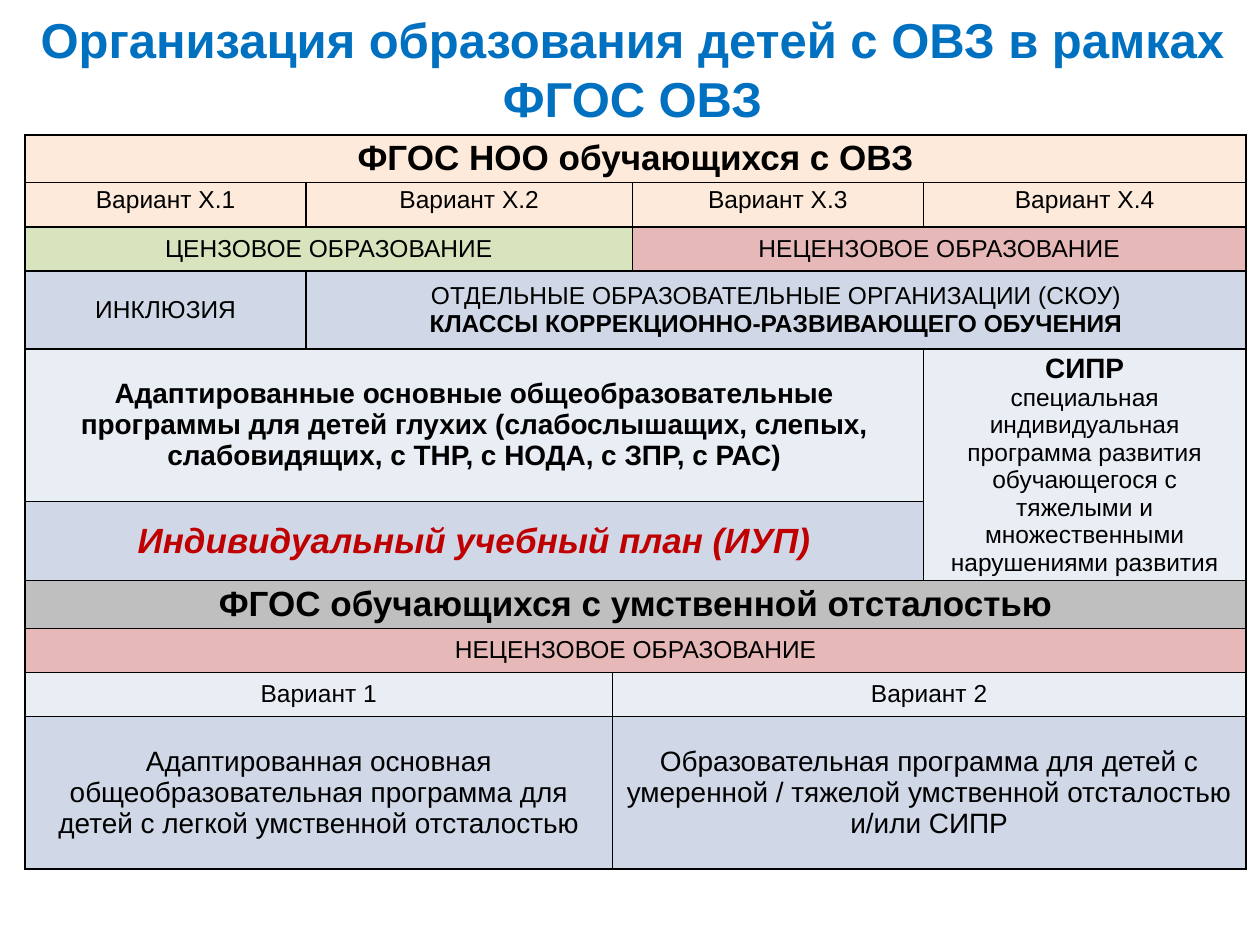
from dataclasses import dataclass
from itertools import product

from lxml.etree import SubElement
from pptx import Presentation
from pptx.dml.color import RGBColor
from pptx.enum.text import MSO_ANCHOR as Anchor, MSO_AUTO_SIZE as AutoSize, PP_ALIGN as Align
from pptx.oxml.ns import qn
from pptx.util import Inches, Pt


@dataclass(frozen=True)
class Theme:
    """Colours, type sizes and text styles of the slide."""
    font: str = "Arial"
    black: str = "000000"
    title: str = "0070C0"
    accent: str = "C00000"
    peach: str = "FDEADA"
    green: str = "D7E4BD"
    rose: str = "E6B9B8"
    blue: str = "D0D8E8"
    pale: str = "E9EDF4"
    grey: str = "BFBFBF"
    title_size: int = 28
    heading_size: int = 20
    program_size: int = 16
    text_size: int = 14
    border: float = 1

    def style(self, name):
        """Return size, bold, italic and colour for a named style."""
        return {
            "title": (self.title_size, True, False, self.title),
            "heading": (self.heading_size, True, False, self.black),
            "plan": (self.heading_size, True, True, self.accent),
            "program": (self.program_size, False, False, self.black),
            "program bold": (self.program_size, True, False, self.black),
            "text": (self.text_size, False, False, self.black),
            "text bold": (self.text_size, True, False, self.black),
        }[name]


THEME = Theme()
SLIDE_SIZE = (10, 7.5)
TITLE_BOX = (0.04, 0.02, 9.96, 1.05)
TABLE_ORIGIN = (0.2, 1.07)
COLUMNS = (2.23, 2.43, 0.1, 2.31, 2.56)
LABEL, HEADING, FORMS, PLAN, PROGRAM = 0.35, 0.38, 0.62, 0.53, 1.21
ROWS = (HEADING, LABEL, LABEL, FORMS, PROGRAM, PLAN, HEADING, LABEL, LABEL, PROGRAM)
TOP_ROWS = 2

# row, column, row span, column span, fill, paragraphs
CELLS = [
    (0, 0, 1, 5, THEME.peach, [("ФГОС НОО обучающихся с ОВЗ", "heading")]),
    (1, 0, 1, 1, THEME.peach, [("Вариант Х.1", "text")]),
    (1, 1, 1, 2, THEME.peach, [("Вариант Х.2", "text")]),
    (1, 3, 1, 1, THEME.peach, [("Вариант Х.3", "text")]),
    (1, 4, 1, 1, THEME.peach, [("Вариант Х.4", "text")]),
    (2, 0, 1, 3, THEME.green, [("ЦЕНЗОВОЕ ОБРАЗОВАНИЕ", "text")]),
    (2, 3, 1, 2, THEME.rose, [("НЕЦЕНЗОВОЕ ОБРАЗОВАНИЕ", "text")]),
    (3, 0, 1, 1, THEME.blue, [("ИНКЛЮЗИЯ", "text")]),
    (3, 1, 1, 4, THEME.blue, [
        ("ОТДЕЛЬНЫЕ ОБРАЗОВАТЕЛЬНЫЕ ОРГАНИЗАЦИИ (СКОУ)", "text"),
        ("КЛАССЫ КОРРЕКЦИОННО-РАЗВИВАЮЩЕГО ОБУЧЕНИЯ", "text bold")]),
    (4, 0, 1, 4, THEME.pale, [
        ("Адаптированные основные общеобразовательные программы для детей глухих "
         "(слабослышащих, слепых, слабовидящих, с ТНР, с НОДА, с ЗПР, с РАС)", "program bold")]),
    (4, 4, 2, 1, THEME.pale, [
        ("СИПР", "program bold"),
        ("специальная индивидуальная программа развития обучающегося с тяжелыми "
         "и множественными нарушениями развития", "text")]),
    (5, 0, 1, 4, THEME.blue, [("Индивидуальный учебный план (ИУП)", "plan")]),
    (6, 0, 1, 5, THEME.grey, [("ФГОС обучающихся с умственной отсталостью", "heading")]),
    (7, 0, 1, 5, THEME.rose, [("НЕЦЕНЗОВОЕ ОБРАЗОВАНИЕ", "text")]),
    (8, 0, 1, 2, THEME.pale, [("Вариант 1", "text")]),
    (8, 2, 1, 3, THEME.pale, [("Вариант 2", "text")]),
    (9, 0, 1, 2, THEME.blue, [
        ("Адаптированная основная общеобразовательная программа для детей "
         "с легкой умственной отсталостью", "program")]),
    (9, 2, 1, 3, THEME.blue, [
        ("Образовательная программа для детей с умеренной / тяжелой умственной отсталостью",
         "program"),
        ("и/или СИПР", "program")]),
]


def set_attributes(target, values):
    """Set each named value on the target."""
    for name, value in values.items():
        setattr(target, name, value)


def write_paragraphs(frame, paragraphs):
    """Fill a text frame with centred, styled paragraphs."""
    for index, (wording, style_name) in enumerate(paragraphs):
        line = frame.add_paragraph() if index else frame.paragraphs[0]
        line.alignment = Align.CENTER
        run = line.add_run()
        run.text = wording
        size, bold, italic, colour = THEME.style(style_name)
        set_attributes(run.font, {"name": THEME.font, "size": Pt(size), "bold": bold,
                                  "italic": italic})
        run.font.color.rgb = RGBColor.from_string(colour)


def add_title(slide, wording):
    """Place and format the title placeholder."""
    heading = slide.shapes.title
    left, top, width, height = map(Inches, TITLE_BOX)
    set_attributes(heading, {"left": left, "top": top, "width": width, "height": height})
    set_attributes(heading.text_frame, {"word_wrap": True, "auto_size": AutoSize.NONE,
                                        "vertical_anchor": Anchor.MIDDLE})
    write_paragraphs(heading.text_frame, [(wording, "title")])


def draw_borders(cell):
    """Draw a solid line on all four sides of a cell."""
    properties = cell._tc.get_or_add_tcPr()
    for side in ("a:lnL", "a:lnR", "a:lnT", "a:lnB"):
        edge = SubElement(properties, qn(side), w=str(Pt(THEME.border)))
        paint = SubElement(edge, qn("a:solidFill"))
        SubElement(paint, qn("a:srgbClr"), val=THEME.black)


def fill_cell(cell, colour, paragraphs, anchor):
    """Colour a cell and write its text."""
    cell.fill.solid()
    cell.fill.fore_color.rgb = RGBColor.from_string(colour)
    set_attributes(cell, {"vertical_anchor": anchor,
                          "margin_left": Inches(0.06), "margin_right": Inches(0.06),
                          "margin_top": Inches(0.03), "margin_bottom": Inches(0.03)})
    write_paragraphs(cell.text_frame, paragraphs)


def add_variants_table(slide):
    """Build the table of standards, variants and programmes."""
    left, top = TABLE_ORIGIN
    variants = slide.shapes.add_table(
        len(ROWS), len(COLUMNS), Inches(left), Inches(top),
        Inches(sum(COLUMNS)), Inches(sum(ROWS))).table
    set_attributes(variants, {"first_row": False, "horz_banding": False})
    for column, width in zip(variants.columns, COLUMNS):
        column.width = Inches(width)
    for row, height in zip(variants.rows, ROWS):
        row.height = Inches(height)
    for row, column in product(range(len(ROWS)), range(len(COLUMNS))):
        draw_borders(variants.cell(row, column))
    for row, column, row_span, column_span, colour, paragraphs in CELLS:
        cell = variants.cell(row, column)
        if row_span * column_span > 1:
            cell.merge(variants.cell(row + row_span - 1, column + column_span - 1))
        anchor = Anchor.TOP if row < TOP_ROWS else Anchor.MIDDLE
        fill_cell(cell, colour, paragraphs, anchor)


def main():
    """Build and save the slide."""
    deck = Presentation()
    deck.slide_width, deck.slide_height = map(Inches, SLIDE_SIZE)
    slide = deck.slides.add_slide(deck.slide_layouts.get_by_name("Title Only"))
    add_title(slide, "Организация образования детей с ОВЗ в рамках ФГОС ОВЗ")
    add_variants_table(slide)
    deck.save("out.pptx")


if __name__ == "__main__":
    main()
